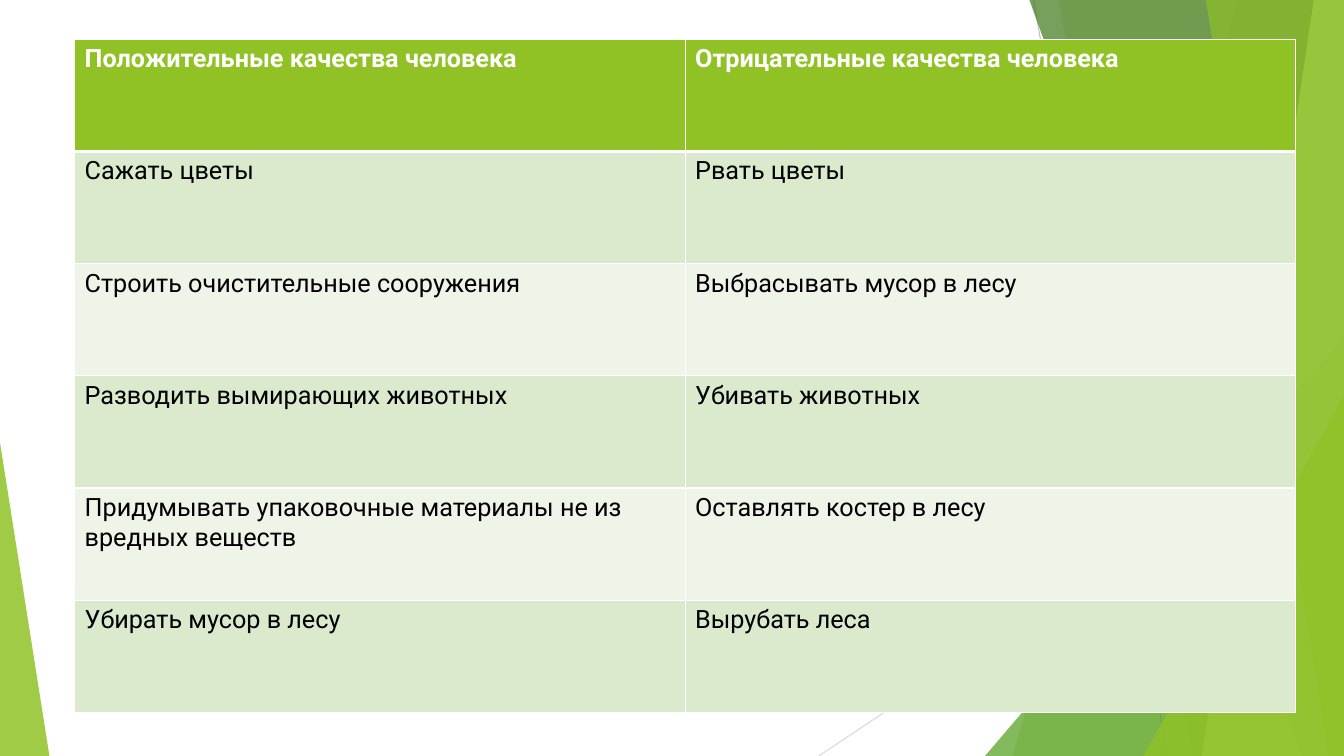
from dataclasses import dataclass

from lxml import etree
from pptx import Presentation
from pptx.dml.color import RGBColor
from pptx.enum.shapes import MSO_CONNECTOR, MSO_SHAPE
from pptx.oxml.ns import qn
from pptx.util import Inches, Pt

STRAIGHT = MSO_CONNECTOR.STRAIGHT
TRIANGLE = MSO_SHAPE.ISOSCELES_TRIANGLE
BLANK_LAYOUT = 6
SLIDE_W, SLIDE_H = 13.33, 7.5


@dataclass(frozen=True)
class Theme:
    font: str = "Roboto"
    size: float = 18
    accent: str = "90C226"
    green: str = "54A021"
    dark: str = "3F7819"
    lime: str = "C0E474"
    white: str = "FFFFFF"
    text: str = "000000"
    bands: tuple = ("DBE9CD", "EEF4E8")
    lines: tuple = ("BFBFBF", "D9D9D9")
    line_width: float = 0.75
    border: float = 1
    header_border: float = 3


THEME = Theme()

QUALITIES = [
    ("Положительные качества человека", "Отрицательные качества человека"),
    ("Сажать цветы", "Рвать цветы"),
    ("Строить очистительные сооружения", "Выбрасывать мусор в лесу"),
    ("Разводить вымирающих животных", "Убивать животных"),
    ("Придумывать упаковочные материалы не из вредных веществ",
     "Оставлять костер в лесу"),
    ("Убирать мусор в лесу", "Вырубать леса"),
]


def paint(sp, color, opacity):
    """Fill a shape with a translucent colour, without line or shadow."""
    sp.shadow.inherit = False
    sp.line.fill.background()
    sp.fill.solid()
    sp.fill.fore_color.rgb = RGBColor.from_string(color)
    clr = sp.fill._xPr.find(qn("a:solidFill"))[0]
    etree.SubElement(clr, qn("a:alpha"), val=str(opacity * 1000))


def add_line(slide, start, end, color):
    line = slide.shapes.add_connector(
        STRAIGHT, *[Inches(v) for v in (*start, *end)])
    line.line.color.rgb = RGBColor.from_string(color)
    line.line.width = Pt(THEME.line_width)
    etree.SubElement(line._element.spPr, qn("a:effectLst"))


def add_facet(slide, box, top_x, bottom_x, color, opacity):
    """Fill the box from a slanted left edge to its right side."""
    left, top, width, height = box
    right, bottom = left + width, top + height
    points = [(left + top_x, top), (right, top), (right, bottom),
              (left + bottom_x, bottom)]
    points = [(Inches(x), Inches(y)) for x, y in points]
    builder = slide.shapes.build_freeform(*points[0])
    builder.add_line_segments(points[1:], close=True)
    paint(builder.convert_to_shape(), color, opacity)


def add_wedge(slide, box, apex, color, opacity):
    """Add a triangle whose apex is at the left (0) or right (1) of the box."""
    sp = slide.shapes.add_shape(TRIANGLE, *[Inches(v) for v in box])
    sp.adjustments[0] = apex
    paint(sp, color, opacity)


def add_right_decor(slide, box):
    left, top, width, height = box
    right, bottom = left + width, top + height

    def corner_wedge(w, h, color, opacity):
        add_wedge(slide, (right - w, bottom - h, w, h), 1, color, opacity)

    add_line(slide, (left + 2.13, top), (left + 3.46, bottom), THEME.lines[0])
    add_line(slide, (right, top + 4.03), (left, bottom), THEME.lines[1])
    add_facet(slide, box, 4.16, 1.92, THEME.accent, 30)
    add_facet(slide, box, 2.38, 3.71, THEME.accent, 20)
    corner_wedge(3.56, 4.17, THEME.green, 72)
    add_facet(slide, box, 2.09, 4.79, THEME.dark, 70)
    add_facet(slide, box, 4.91, 3.8, THEME.lime, 70)
    add_facet(slide, box, 3.84, 5.06, THEME.accent, 65)
    corner_wedge(1.99, 3.57, THEME.accent, 80)


def set_borders(cell, **widths):
    tcPr = cell._tc.get_or_add_tcPr()
    for side in "LRTB":
        width = Pt(widths.get(side, THEME.border))
        ln = etree.SubElement(tcPr, qn(f"a:ln{side}"), w=str(width))
        fill = etree.SubElement(ln, qn("a:solidFill"))
        etree.SubElement(fill, qn("a:srgbClr"), val=THEME.white)


def write(tf, text, color=THEME.text, bold=False, size=THEME.size):
    r = tf.paragraphs[0].add_run()
    r.text = text
    r.font.name = THEME.font
    r.font.size = Pt(size)
    r.font.bold = bold
    r.font.color.rgb = RGBColor.from_string(color)


def add_qualities_table(slide, box, rows):
    n_rows, n_cols = len(rows), len(rows[0])
    table = slide.shapes.add_table(
        n_rows, n_cols, *[Inches(v) for v in box]).table
    for i, texts in enumerate(rows):
        header = i == 0
        fill = THEME.accent if header else THEME.bands[(i - 1) % 2]
        edges = {0: {"B": THEME.header_border},
                 1: {"T": THEME.header_border}}.get(i, {})
        for j, text in enumerate(texts):
            cell = table.cell(i, j)
            set_borders(cell, **edges)
            cell.fill.solid()
            cell.fill.fore_color.rgb = RGBColor.from_string(fill)
            write(cell.text_frame, text, bold=header,
                  color=THEME.white if header else THEME.text)


def main():
    prs = Presentation()
    prs.slide_width, prs.slide_height = Inches(SLIDE_W), Inches(SLIDE_H)
    slide = prs.slides.add_slide(prs.slide_layouts[BLANK_LAYOUT])
    add_right_decor(slide, (8.12, 0, SLIDE_W - 8.12, SLIDE_H))
    add_wedge(slide, (0, 4.39, 0.49, 3.11), 0, THEME.accent, 85)
    add_qualities_table(slide, (0.74, 0.39, 12.11, 6.68), QUALITIES)
    prs.save("out.pptx")


if __name__ == "__main__":
    main()
